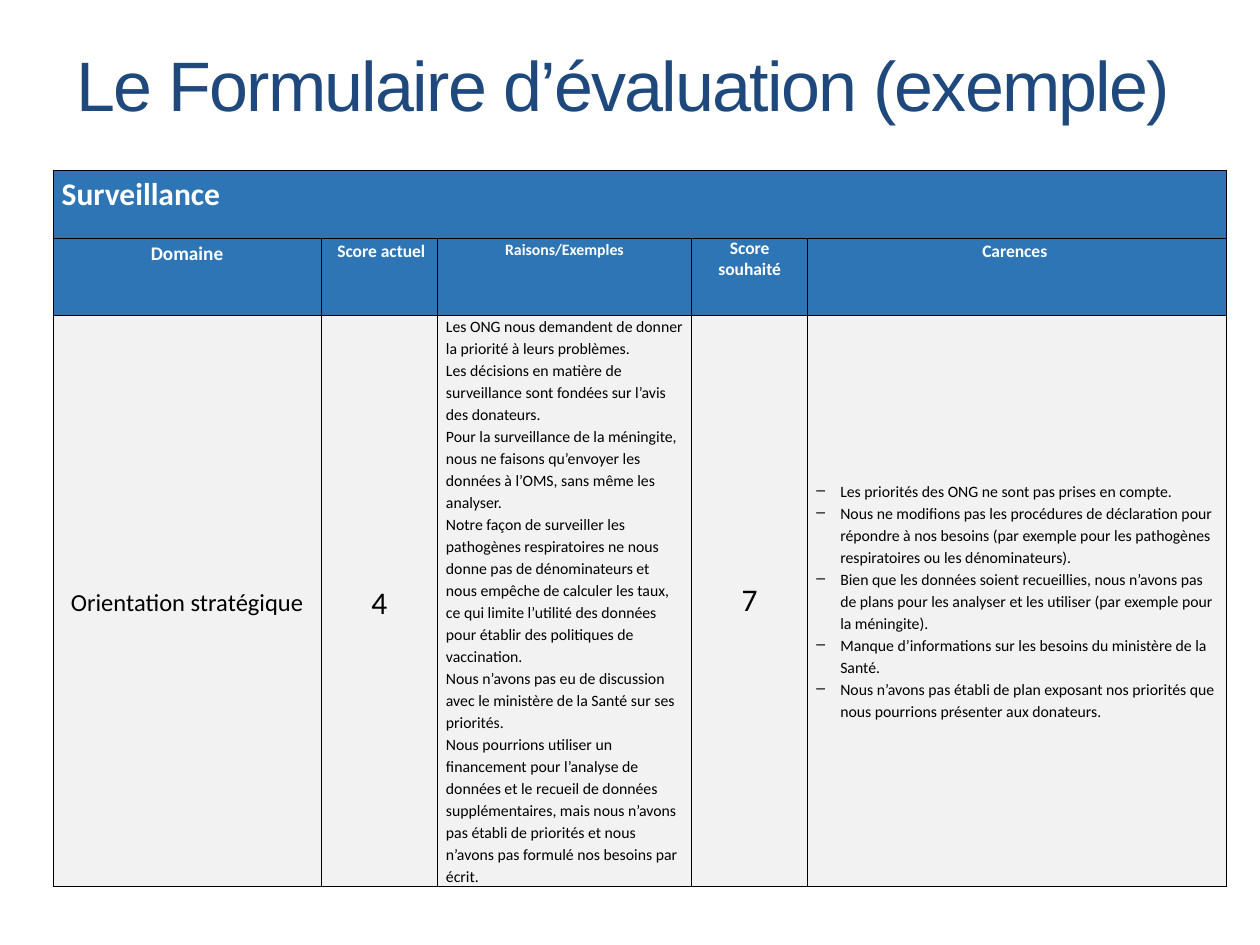
from dataclasses import dataclass

from lxml.etree import SubElement
from pptx import Presentation
from pptx.dml.color import RGBColor
from pptx.enum.text import MSO_ANCHOR, PP_ALIGN
from pptx.oxml import parse_xml
from pptx.oxml.ns import nsdecls, qn
from pptx.util import Inches, Pt


@dataclass(frozen=True)
class Theme:
    title_font: str = "Arial"
    table_font: str = "Calibri"
    title: str = "1F497D"
    header: str = "2E75B6"
    body: str = "F2F2F2"
    header_text: str = "FFFFFF"
    body_text: str = "000000"
    border: str = "000000"
    title_size: int = 40
    large: int = 18
    domain: int = 14
    domain_heading: int = 11
    heading: int = 10
    small: int = 9


THEME = Theme()

COLUMN_WIDTHS = (2.13, 0.92, 2.02, 0.92, 3.32)
ROW_HEIGHTS = (0.54, 0.61, 3.78)

HEADINGS = (
    ("Domaine", THEME.domain_heading, 1.15),
    (" Score actuel", THEME.heading, 1.15),
    ("Raisons/Exemples", THEME.small, 1.15),
    ("Score souhaité", THEME.heading, 1),
    ("Carences ", THEME.heading, 1.15),
)

REASONS = (
    "Les ONG nous demandent de donner la priorité à leurs problèmes.",
    "Les décisions en matière de surveillance sont fondées sur l’avis des donateurs.",
    "Pour la surveillance de la méningite, nous ne faisons qu’envoyer les données à l’OMS, "
    "sans même les analyser.",
    "Notre façon de surveiller les pathogènes respiratoires ne nous donne pas de dénominateurs "
    "et nous empêche de calculer les taux, ce qui limite l’utilité des données pour établir "
    "des politiques de vaccination.",
    "Nous n’avons pas eu de discussion avec le ministère de la Santé sur ses priorités.",
    "Nous pourrions utiliser un financement pour l’analyse de données et le recueil de données "
    "supplémentaires, mais nous n’avons pas établi de priorités et nous n’avons pas formulé "
    "nos besoins par écrit.",
)

GAPS = (
    "Les priorités des ONG ne sont pas prises en compte.",
    "Nous ne modifions pas les procédures de déclaration pour répondre à nos besoins "
    "(par exemple pour les pathogènes respiratoires ou les dénominateurs).",
    "Bien que les données soient recueillies, nous n’avons pas de plans pour les analyser "
    "et les utiliser (par exemple pour la méningite).",
    "Manque d’informations sur les besoins du ministère de la Santé.",
    "Nous n’avons pas établi de plan exposant nos priorités que nous pourrions présenter "
    "aux donateurs.",
)


def style_font(font, name, size, color, bold=False):
    font.name = name
    font.size = Pt(size)
    font.bold = bold
    font.color.rgb = RGBColor.from_string(color)


def add_dash(para):
    """Give the paragraph a dash bullet with a hanging indent."""
    properties = para._p.get_or_add_pPr()
    properties.set("marL", str(Inches(0.19)))
    properties.set("indent", str(-Inches(0.19)))
    SubElement(properties, qn("a:buChar")).set("char", "–")


def style_cell(cell, fill):
    """Set the margins, fill and thin border that all cells share."""
    cell.margin_left = cell.margin_right = Inches(0.07)
    cell.margin_top = cell.margin_bottom = 0
    cell.fill.solid()
    cell.fill.fore_color.rgb = RGBColor.from_string(fill)
    properties = cell._tc.get_or_add_tcPr()
    for position, side in enumerate(("lnL", "lnR", "lnT", "lnB")):
        properties.insert(position, parse_xml(
            f'<a:{side} {nsdecls("a")} w="{Pt(0.25)}"><a:solidFill>'
            f'<a:srgbClr val="{THEME.border}"/></a:solidFill></a:{side}>'))


def write_cell(cell, lines, size, color, bold=False, align=PP_ALIGN.CENTER,
               spacing=1.15, dashed=False):
    frame = cell.text_frame
    for index, line in enumerate(lines):
        para = frame.add_paragraph() if index else frame.paragraphs[0]
        para.alignment = align
        para.line_spacing = spacing
        if dashed:
            add_dash(para)
        para.add_run().text = line
        style_font(para.font, THEME.table_font, size, color, bold)


def add_title(page, text):
    box = page.shapes.add_textbox(Inches(0.51), Inches(0.12), Inches(9), Inches(1.08))
    frame = box.text_frame
    frame.word_wrap = True
    frame.vertical_anchor = MSO_ANCHOR.MIDDLE
    para = frame.paragraphs[0]
    span = para.add_run()
    span.text = text
    style_font(para.font, THEME.title_font, THEME.title_size, THEME.title)
    span.font._element.set("spc", "-100")


def add_assessment_table(page):
    table = page.shapes.add_table(
        len(ROW_HEIGHTS), len(COLUMN_WIDTHS), Inches(0.42), Inches(1.35),
        Inches(sum(COLUMN_WIDTHS)), Inches(sum(ROW_HEIGHTS))).table
    for column, width in zip(table.columns, COLUMN_WIDTHS):
        column.width = Inches(width)
    for index, (row, height) in enumerate(zip(table.rows, ROW_HEIGHTS)):
        row.height = Inches(height)
        for cell in row.cells:
            style_cell(cell, THEME.header if index < 2 else THEME.body)

    banner = table.cell(0, 0)
    banner.merge(table.cell(0, len(COLUMN_WIDTHS) - 1))
    write_cell(banner, ["Surveillance"], THEME.large, THEME.header_text,
               bold=True, align=PP_ALIGN.LEFT)
    for column, (heading, size, spacing) in enumerate(HEADINGS):
        write_cell(table.cell(1, column), [heading], size, THEME.header_text,
                   bold=True, spacing=spacing)

    domain, current, reasons, desired, gaps = table.rows[2].cells
    for cell in (domain, current, reasons, desired, gaps):
        cell.vertical_anchor = MSO_ANCHOR.MIDDLE
    write_cell(domain, ["Orientation stratégique"], THEME.domain, THEME.body_text)
    write_cell(current, ["4"], THEME.large, THEME.body_text)
    write_cell(reasons, REASONS, THEME.small, THEME.body_text, align=PP_ALIGN.LEFT)
    write_cell(desired, ["7"], THEME.large, THEME.body_text, spacing=1)
    write_cell(gaps, GAPS, THEME.small, THEME.body_text, align=PP_ALIGN.LEFT, dashed=True)


def main():
    deck = Presentation()
    deck.slide_width, deck.slide_height = Inches(10), Inches(7.5)
    page = deck.slides.add_slide(deck.slide_layouts[6])
    add_assessment_table(page)
    add_title(page, "Le Formulaire d’évaluation (exemple)")
    deck.save("out.pptx")


if __name__ == "__main__":
    main()
